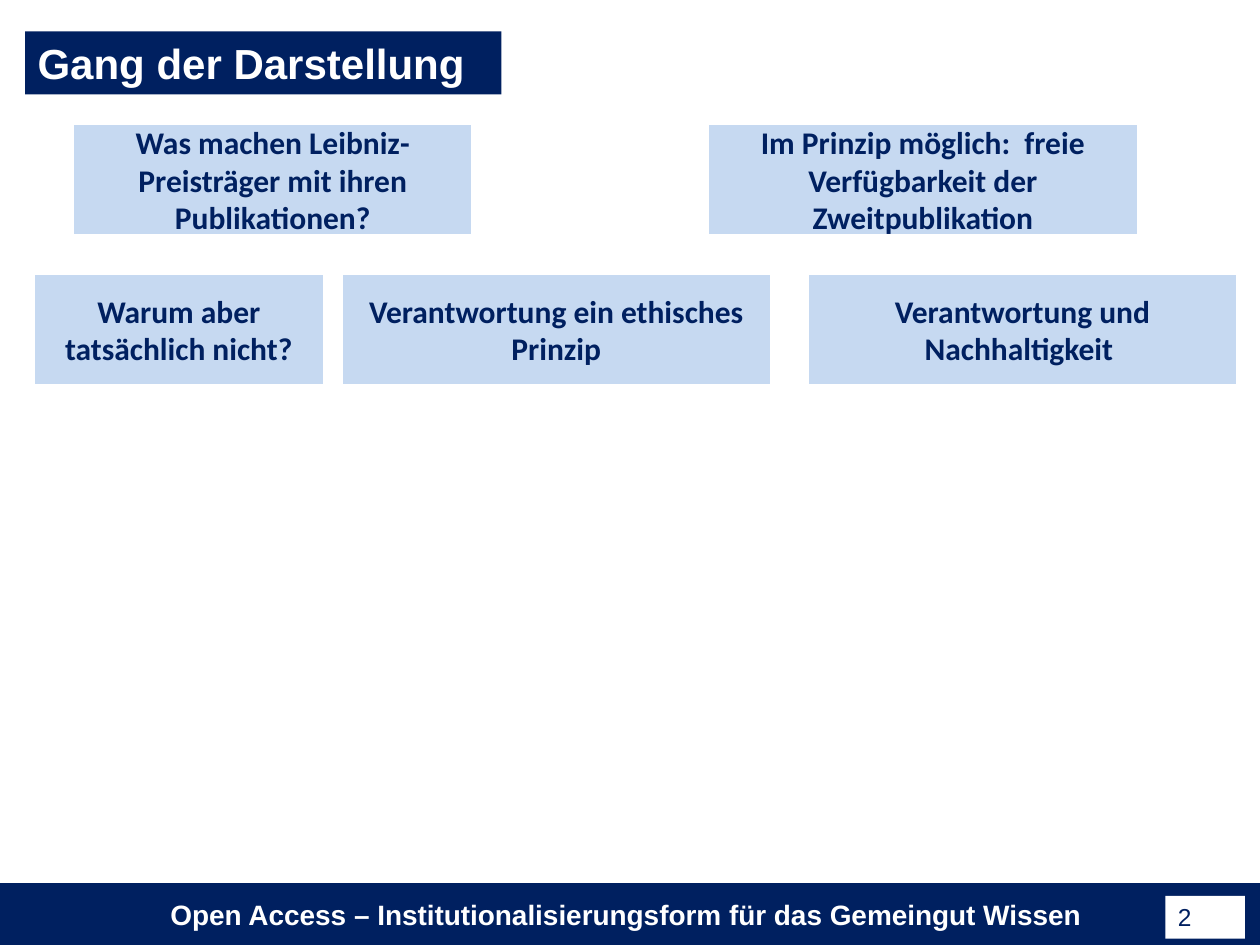
from pptx import Presentation
from pptx.dml.color import RGBColor
from pptx.enum.shapes import MSO_SHAPE
from pptx.enum.text import MSO_ANCHOR, MSO_AUTO_SIZE, PP_ALIGN
from pptx.util import Inches, Pt

COLORS = {"navy": "002060", "pale": "C6D9F1", "white": "FFFFFF"}
TOPIC_HEIGHT = 0.87
TOPIC_ROWS = [
    (0.99, [
        (0.59, 3.15, "Was machen Leibniz-Preisträger mit ihren Publikationen?"),
        (5.63, 3.39, "Im Prinzip möglich:  freie Verfügbarkeit der Zweitpublikation"),
    ]),
    (2.18, [
        (0.28, 2.28, "Warum aber tatsächlich nicht?"),
        (2.72, 3.39, "Verantwortung ein ethisches Prinzip"),
        (6.42, 3.39, "Verantwortung und Nachhaltigkeit "),
    ]),
]


def add_panel(slide, box, text, fill, color, size, font="Arial", bold=True,
              centred=True, preset=MSO_SHAPE.RECTANGLE):
    panel = slide.shapes.add_shape(preset, *map(Inches, box))
    panel.shadow.inherit = False
    panel.fill.solid()
    panel.fill.fore_color.rgb = RGBColor.from_string(COLORS[fill])
    panel.line.fill.background()
    frame = panel.text_frame
    frame.text = text
    frame.word_wrap = True
    frame.vertical_anchor = MSO_ANCHOR.MIDDLE if centred else MSO_ANCHOR.TOP
    paragraph = frame.paragraphs[0]
    paragraph.alignment = PP_ALIGN.CENTER if centred else PP_ALIGN.LEFT
    for run in paragraph.runs:
        run.font.name = font
        run.font.size = Pt(size)
        run.font.bold = bold
        run.font.color.rgb = RGBColor.from_string(COLORS[color])
    return frame


def add_footer(slide, box):
    left, top, width, height = box
    footer = add_panel(
        slide, box,
        "Open Access – Institutionalisierungsform für das Gemeingut Wissen ",
        "navy", "white", 16)
    footer.margin_left = footer.margin_right = 0
    footer.margin_top = footer.margin_bottom = 0
    number_box = (left + width - 0.75, top + 0.1, 0.63, 0.34)
    number = add_panel(slide, number_box, "2", "white", "navy", 14,
                       bold=False, centred=False)
    number.auto_size = MSO_AUTO_SIZE.SHAPE_TO_FIT_TEXT


def add_title(slide, box):
    title = add_panel(slide, box, "Gang der Darstellung", "navy", "white", 24,
                      centred=False)
    title.auto_size = MSO_AUTO_SIZE.SHAPE_TO_FIT_TEXT


def add_topic(slide, box, text):
    add_panel(slide, box, text, "pale", "navy", 18, font="Calibri",
              preset=MSO_SHAPE.FLOWCHART_PROCESS)


def main():
    deck = Presentation()
    deck.slide_width = Inches(10)
    deck.slide_height = Inches(7.5)
    slide = deck.slides.add_slide(deck.slide_layouts[6])
    add_footer(slide, (0, 7.01, 10, 0.49))
    add_title(slide, (0.2, 0.25, 3.78, 0.5))
    for top, topics in TOPIC_ROWS:
        for left, width, text in topics:
            add_topic(slide, (left, top, width, TOPIC_HEIGHT), text)
    deck.save("out.pptx")


if __name__ == "__main__":
    main()
